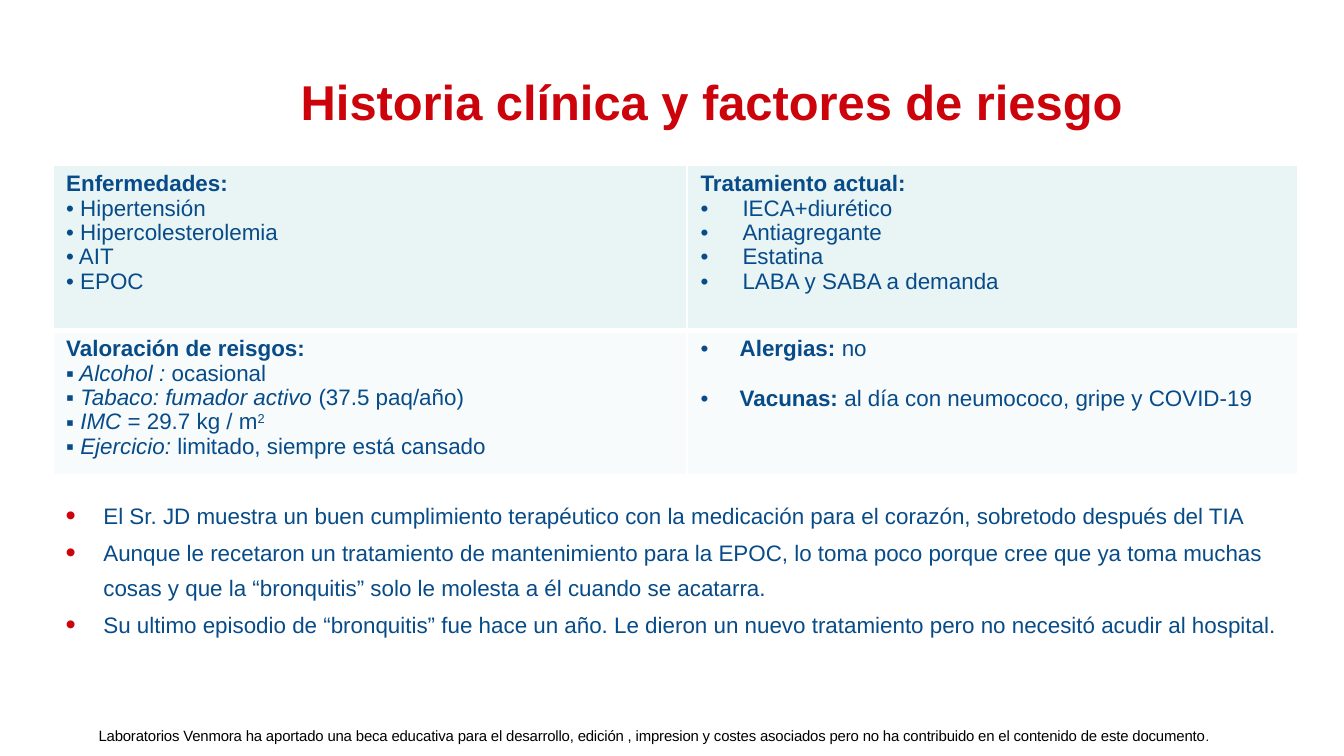
from dataclasses import dataclass
from typing import Optional

from lxml import etree
from pptx import Presentation
from pptx import util as u
from pptx.dml import color
from pptx.enum import text
from pptx.oxml import ns


@dataclass(frozen=True)
class Theme:
    font: str = "Arial"
    red: str = "CC030B"
    blue: str = "074B88"
    black: str = "000000"
    footer_dot: str = "00050A"
    white: str = "FFFFFF"
    row_fills: tuple[str, ...] = ("E9F4F5", "F8FBFC")
    title_size: float = 26.2
    body_size: float = 12
    footer_size: float = 8
    dot_size: float = 7


THEME = Theme()
LEFT = text.PP_ALIGN.LEFT
CENTER = text.PP_ALIGN.CENTER
JUSTIFY = text.PP_ALIGN.JUSTIFY


@dataclass(frozen=True)
class Span:
    words: str
    bold: bool = False
    italic: bool = False
    superscript: bool = False
    size: float = THEME.body_size
    color: str = THEME.blue
    tracking: int = 0


@dataclass(frozen=True)
class Para:
    spans: tuple[Span, ...]
    bullet: str = ""
    indent: float = 0
    align: text.PP_ALIGN = LEFT
    before: float = 0
    line_spacing: Optional[float] = None
    bullet_color: str = ""
    bullet_percent: int = 100


@dataclass(frozen=True)
class Box:
    left: float
    top: float
    width: float
    height: float


def add_child(parent, tag: str, **attributes: str):
    child = etree.SubElement(parent, ns.qn(tag))
    for name, value in attributes.items():
        child.set(name, value)
    return child


def add_bullet(paragraph, para: Para) -> None:
    properties = paragraph._p.get_or_add_pPr()
    properties.set("marL", str(u.Pt(para.indent)))
    properties.set("indent", str(-u.Pt(para.indent)))
    if para.bullet_color:
        fill = add_child(properties, "a:buClr")
        add_child(fill, "a:srgbClr", val=para.bullet_color)
    add_child(properties, "a:buSzPct", val=str(para.bullet_percent * 1000))
    add_child(properties, "a:buFont", typeface=THEME.font)
    add_child(properties, "a:buChar", char=para.bullet)


def write_span(paragraph, span: Span) -> None:
    run = paragraph.add_run()
    run.text = span.words
    run.font.name = THEME.font
    run.font.size = u.Pt(span.size)
    run.font.bold = span.bold
    run.font.italic = span.italic
    run.font.color.rgb = color.RGBColor.from_string(span.color)
    properties = run._r.get_or_add_rPr()
    if span.superscript:
        properties.set("baseline", "30000")
    if span.tracking:
        properties.set("spc", str(span.tracking))


def write_paras(frame, paras: list[Para]) -> None:
    for index, para in enumerate(paras):
        paragraph = frame.add_paragraph() if index else frame.paragraphs[0]
        if para.bullet:
            add_bullet(paragraph, para)
        paragraph.alignment = para.align
        if para.line_spacing:
            paragraph.line_spacing = para.line_spacing
        if index and para.before:
            paragraph.space_before = u.Pt(para.before)
        for span in para.spans:
            write_span(paragraph, span)


def add_text(page, box: Box, paras: list[Para], anchor=text.MSO_ANCHOR.TOP, inset: bool = True) -> None:
    shape = page.shapes.add_textbox(u.Pt(box.left), u.Pt(box.top), u.Pt(box.width), u.Pt(box.height))
    frame = shape.text_frame
    frame.word_wrap = True
    frame.vertical_anchor = anchor
    if not inset:
        frame.margin_left = frame.margin_right = frame.margin_top = frame.margin_bottom = 0
    write_paras(frame, paras)


def add_borders(cell, widths: dict[str, float]) -> None:
    properties = cell._tc.get_or_add_tcPr()
    for side, width in widths.items():
        line = add_child(properties, f"a:{side}", w=str(u.Pt(width)))
        fill = add_child(line, "a:solidFill")
        add_child(fill, "a:srgbClr", val=THEME.white)


def add_grid(page, box: Box, columns: list[float], rows: list[float], cells: list[list[list[Para]]]) -> None:
    frame = page.shapes.add_table(
        len(rows), len(columns), u.Pt(box.left), u.Pt(box.top), u.Pt(box.width), u.Pt(box.height))
    table = frame.table
    for column, width in zip(table.columns, columns):
        column.width = u.Pt(width)
    for index, height in enumerate(rows):
        table.rows[index].height = u.Pt(height)
        for number, paras in enumerate(cells[index]):
            cell = table.cell(index, number)
            top = 3 if index else 1
            bottom = 1 if index else 3
            add_borders(cell, {"lnL": 1, "lnR": 1, "lnT": top, "lnB": bottom})
            cell.fill.solid()
            cell.fill.fore_color.rgb = color.RGBColor.from_string(THEME.row_fills[index])
            write_paras(cell.text_frame, paras)


def cell_para(*spans: Span, bullet: str = "", indent: float = 0, align=LEFT, before: float = 0) -> Para:
    return Para(spans, bullet, indent, align, before, line_spacing=0.97)


def heading(words: str) -> Para:
    return cell_para(Span(words, bold=True))


def risk(*spans: Span) -> Para:
    return cell_para(*spans, bullet="▪", align=JUSTIFY)


def main() -> None:
    deck = Presentation()
    deck.slide_width, deck.slide_height = u.Pt(720), u.Pt(405)
    page = deck.slides.add_slide(deck.slide_layouts[6])

    footer = Span(
        "Laboratorios Venmora ha aportado una beca educativa para el desarrollo, edición , impresion y costes "
        "asociados pero no ha contribuido en el contenido de este documento",
        size=THEME.footer_size, color=THEME.black, tracking=-10)
    dot = Span(".", size=THEME.dot_size, color=THEME.footer_dot)
    add_text(page, Box(32.4, 389.5, 635.8, 10.8), [Para((footer, dot), align=CENTER)], inset=False)

    title = Span("Historia clínica y factores de riesgo", bold=True, size=THEME.title_size, color=THEME.red)
    add_text(page, Box(154, 31.7, 566, 44.6), [Para((title,))], text.MSO_ANCHOR.MIDDLE)

    notes = [
        "El Sr. JD muestra un buen cumplimiento terapéutico con la medicación para el corazón, sobretodo "
        "después del TIA",
        "Aunque le recetaron un tratamiento de mantenimiento para la EPOC, lo toma poco porque cree que ya "
        "toma muchas cosas y que la “bronquitis” solo le molesta a él cuando se acatarra.",
        "Su ultimo episodio de “bronquitis” fue hace un año. Le dieron un nuevo tratamiento pero no necesitó "
        "acudir al hospital.",
    ]
    add_text(page, Box(28.1, 261.4, 663.8, 74.2), [
        Para((Span(note),), "•", 20.2, before=1.6, line_spacing=1.28,
             bullet_color=THEME.red, bullet_percent=130)
        for note in notes])

    diseases = [heading("Enfermedades:")] + [
        cell_para(Span(f" {name}"), bullet="•", align=JUSTIFY)
        for name in ("Hipertensión", "Hipercolesterolemia", "AIT", "EPOC")]
    treatment = [heading("Tratamiento actual:")] + [
        cell_para(Span(name), bullet="•", indent=22.5)
        for name in ("IECA+diurético", "Antiagregante", "Estatina", "LABA y SABA a demanda")]
    risks = [
        heading("Valoración de reisgos:"),
        risk(Span(" Alcohol : ", italic=True), Span("ocasional")),
        risk(Span(" Tabaco: fumador activo", italic=True), Span(" (37.5 paq/año)")),
        risk(Span(" IMC ", italic=True), Span("= 29.7 kg / m"), Span("2", superscript=True)),
        risk(Span(" Ejercicio: ", italic=True), Span("limitado, siempre está cansado")),
    ]
    prevention = [
        cell_para(Span(f"{label}: ", bold=True), Span(detail), bullet="•", indent=21, before=13.4)
        for label, detail in (("Alergias", "no"), ("Vacunas", "al día con neumococo, gripe y COVID-19"))]
    add_grid(page, Box(28.3, 88.7, 667.2, 162.5), [339.8, 327.4], [88.5, 74],
             [[diseases, treatment], [risks, prevention]])

    deck.save("out.pptx")


if __name__ == "__main__":
    main()
